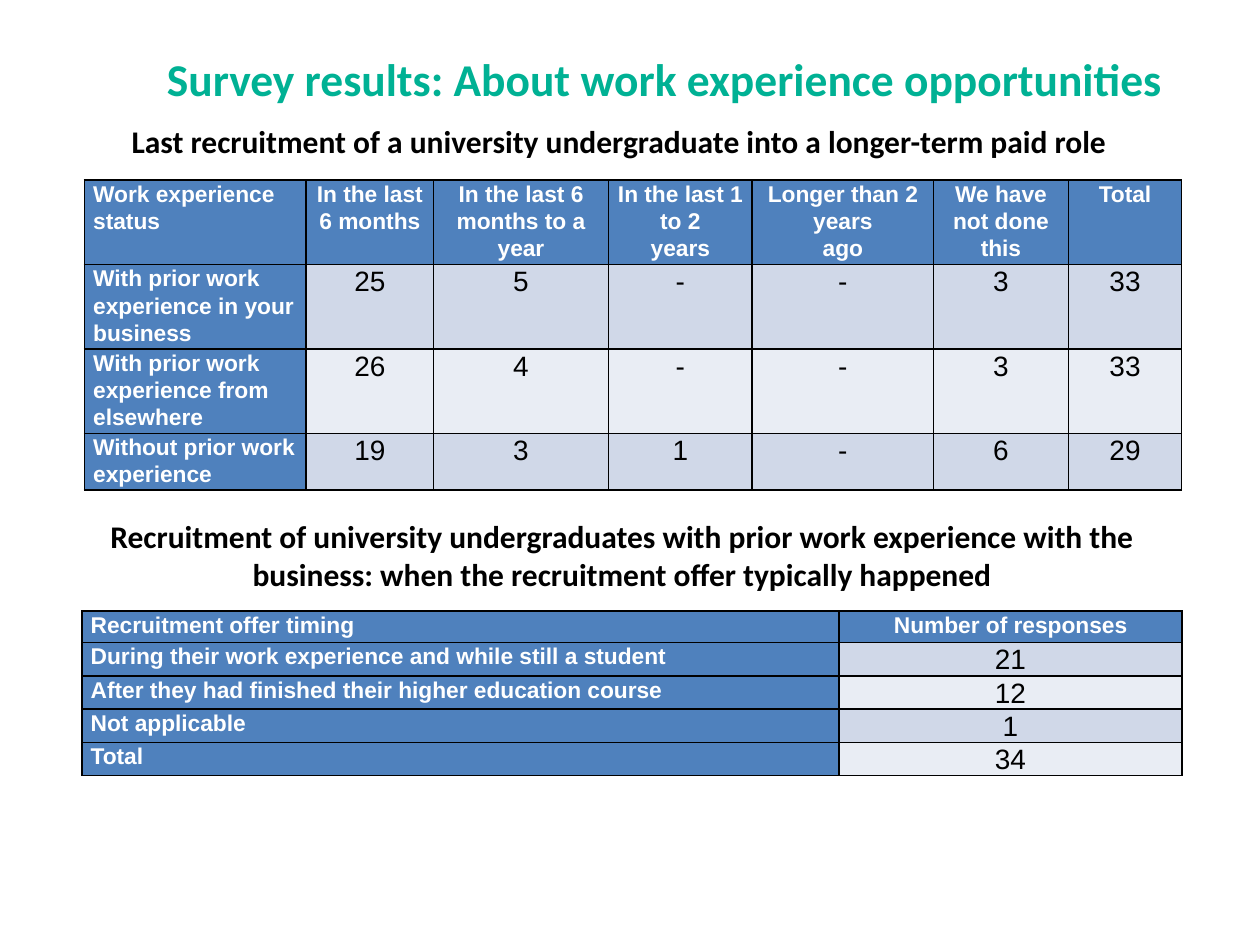
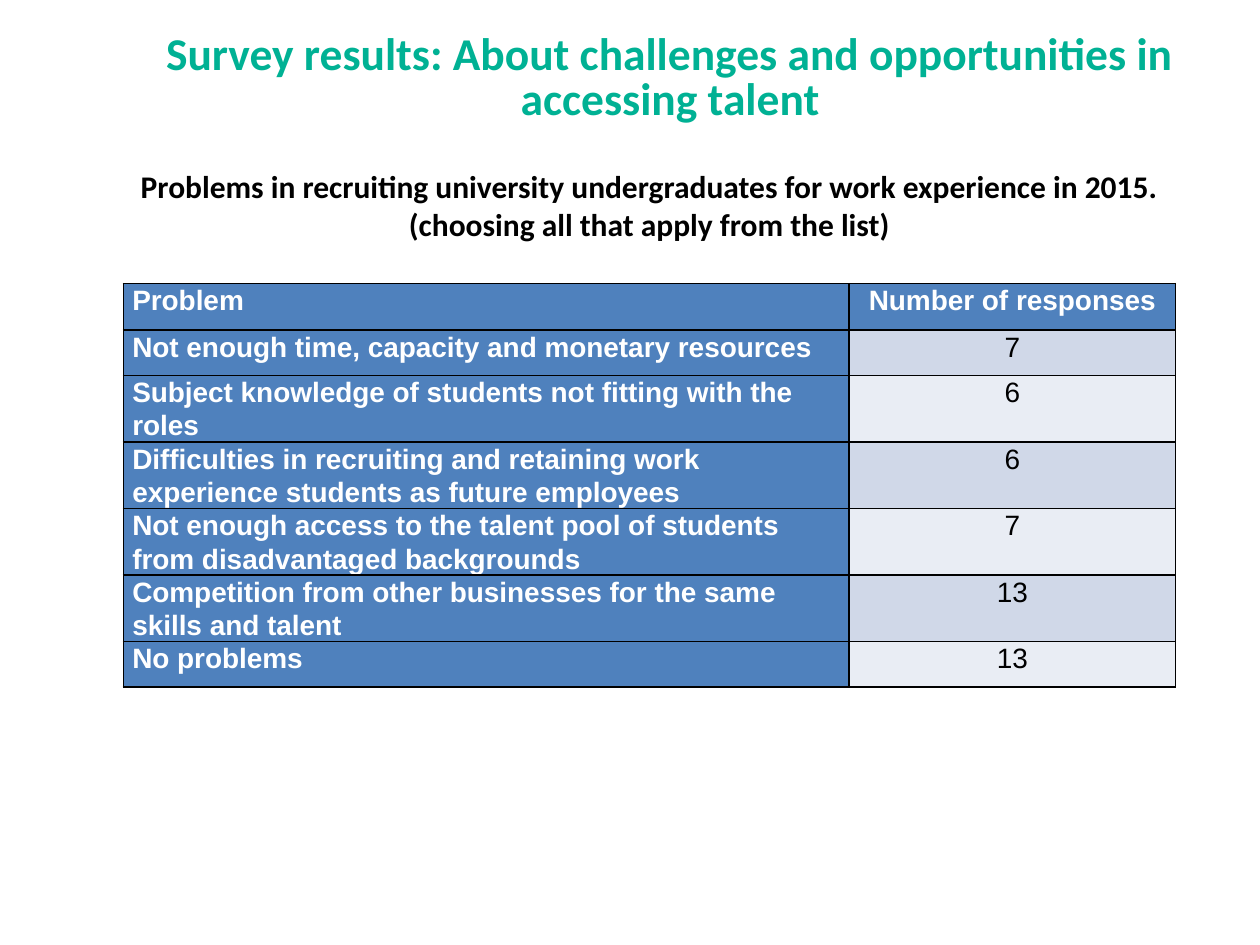
from dataclasses import dataclass

from lxml import etree
from pptx import Presentation
from pptx import util as u
from pptx.dml import color
from pptx.enum import text
from pptx.oxml import ns


@dataclass(frozen=True)
class Theme:
    title_color: str = "00B194"
    header_fill: str = "4F81BD"
    band_fills: tuple[str, str] = ("D0D8E8", "E9EDF4")
    light: str = "FFFFFF"
    dark: str = "000000"
    heading_font: str = "Calibri"
    table_font: str = "Arial"
    title_size: float = 26
    heading_size: float = 18
    value_size: float = 16
    border_width: float = 1
    cell_margin: float = 0.07
    cell_spacing: float = 1.07


THEME = Theme()


@dataclass(frozen=True)
class Box:
    left: float
    top: float
    width: float
    height: float

    def lengths(self) -> tuple:
        return tuple(u.Inches(v) for v in (self.left, self.top, self.width, self.height))


@dataclass(frozen=True)
class Heading:
    words: str
    box: Box


@dataclass(frozen=True)
class ResultTable:
    left: float
    top: float
    columns: tuple[float, ...]
    row_heights: tuple[float, ...]
    label_size: float
    rows: tuple[tuple[str, ...], ...]


@dataclass(frozen=True)
class ResultSlide:
    title: Heading
    title_spacing: float
    headings: tuple[Heading, ...]
    tables: tuple[ResultTable, ...]


def add_run(paragraph, words: str, font_name: str, size: float, rgb: str, bold: bool) -> None:
    run = paragraph.add_run()
    run.text = words
    run.font.name = font_name
    run.font.size = u.Pt(size)
    run.font.bold = bold
    run.font.color.rgb = color.RGBColor.from_string(rgb)


def fill_heading(shape, words: str, size: float, rgb: str):
    """Set centred bold heading text and return its paragraph."""
    frame = shape.text_frame
    frame.word_wrap = True
    frame.auto_size = text.MSO_AUTO_SIZE.NONE
    frame.vertical_anchor = text.MSO_ANCHOR.MIDDLE
    paragraph = frame.paragraphs[0]
    paragraph.alignment = text.PP_ALIGN.CENTER
    add_run(paragraph, words, THEME.heading_font, size, rgb, True)
    return paragraph


def add_title(slide, title: Heading, spacing: float) -> None:
    shape = slide.shapes.title
    shape.left, shape.top, shape.width, shape.height = title.box.lengths()
    paragraph = fill_heading(shape, title.words, THEME.title_size, THEME.title_color)
    paragraph.line_spacing = u.Pt(spacing)


def add_heading(slide, heading: Heading) -> None:
    shape = slide.shapes.add_textbox(*heading.box.lengths())
    fill_heading(shape, heading.words, THEME.heading_size, THEME.dark)


def add_borders(cell) -> None:
    properties = cell._tc.get_or_add_tcPr()
    for side in ("lnL", "lnR", "lnT", "lnB"):
        line = etree.SubElement(properties, ns.qn(f"a:{side}"), w=str(u.Pt(THEME.border_width)))
        fill = etree.SubElement(line, ns.qn("a:solidFill"))
        etree.SubElement(fill, ns.qn("a:srgbClr"), val=THEME.dark)


def fill_cell(cell, words: str, row: int, column: int, label_size: float) -> None:
    is_label = row == 0 or column == 0
    cell.margin_left = cell.margin_right = u.Inches(THEME.cell_margin)
    cell.margin_top = cell.margin_bottom = 0
    add_borders(cell)
    cell.fill.solid()
    fill = THEME.header_fill if is_label else THEME.band_fills[(row - 1) % 2]
    cell.fill.fore_color.rgb = color.RGBColor.from_string(fill)
    frame = cell.text_frame
    for index, line in enumerate(words.split("\n")):
        paragraph = frame.add_paragraph() if index else frame.paragraphs[0]
        paragraph.alignment = text.PP_ALIGN.CENTER if column else text.PP_ALIGN.LEFT
        paragraph.line_spacing = THEME.cell_spacing
        add_run(paragraph, line, THEME.table_font,
                label_size if is_label else THEME.value_size,
                THEME.light if is_label else THEME.dark, is_label)


def add_result_table(slide, result: ResultTable) -> None:
    box = Box(result.left, result.top, sum(result.columns), sum(result.row_heights))
    table = slide.shapes.add_table(len(result.rows), len(result.columns), *box.lengths()).table
    for column, width in zip(table.columns, result.columns):
        column.width = u.Inches(width)
    for row, height in zip(table.rows, result.row_heights):
        row.height = u.Inches(height)
    for row, values in enumerate(result.rows):
        for column, words in enumerate(values):
            fill_cell(table.cell(row, column), words, row, column, result.label_size)


# Work experience opportunities
RECRUITMENT_TABLE = ResultTable(
    0.67, 1.43, (1.76, 1.01, 1.39, 1.14, 1.44, 1.07, 0.9), (0.67, 0.67, 0.67, 0.45), 13,
    (
        ("Work experience status", "In the last 6 months", "In the last 6 months to a year",
         "In the last 1 to 2\nyears", "Longer than 2 years\nago", "We have not done\nthis", "Total"),
        ("With prior work experience in your business", "25", "5", "-", "-", "3", "33"),
        ("With prior work experience from elsewhere", "26", "4", "-", "-", "3", "33"),
        ("Without prior work experience", "19", "3", "1", "-", "6", "29"),
    ),
)
OFFER_TABLE = ResultTable(
    0.65, 4.85, (6.01, 2.72), (0.25,) * 5, 13,
    (
        ("Recruitment offer timing", "Number of responses"),
        ("During their work experience and while still a student", "21"),
        ("After they had finished their higher education course", "12"),
        ("Not applicable", "1"),
        ("Total", "34"),
    ),
)

# Challenges in accessing talent
PROBLEM_TABLE = ResultTable(
    0.98, 2.25, (5.76, 2.59), (0.37,) + (0.36,) * 6, 16,
    (
        ("Problem", "Number of responses"),
        ("Not enough time, capacity and monetary resources", "7"),
        ("Subject knowledge of students not fitting with the roles", "6"),
        ("Difficulties in recruiting and retaining work experience students as future employees", "6"),
        ("Not enough access to the talent pool of students from disadvantaged backgrounds", "7"),
        ("Competition from other businesses for the same skills and talent", "13"),
        ("No problems", "13"),
    ),
)

SLIDES = (
    ResultSlide(
        Heading("Survey results: About work experience opportunities ", Box(1.14, 0.27, 8.36, 0.56)),
        41,
        (
            Heading("Last recruitment of a university undergraduate into a longer-term paid role",
                    Box(0.91, 0.92, 8.01, 0.4)),
            Heading("Recruitment of university undergraduates with prior work experience with the "
                    "business: when the recruitment offer typically happened",
                    Box(0.51, 4.05, 8.86, 0.71)),
        ),
        (RECRUITMENT_TABLE, OFFER_TABLE),
    ),
    ResultSlide(
        Heading("Survey results: About challenges and opportunities in accessing talent",
                Box(1.14, 0.27, 8.36, 0.72)),
        26,
        (
            Heading("Problems in recruiting university undergraduates for work experience in 2015. "
                    "(choosing all that apply from the list)", Box(0.98, 1.27, 8.35, 0.71)),
        ),
        (PROBLEM_TABLE,),
    ),
)


def main() -> None:
    presentation = Presentation()
    presentation.slide_width = u.Inches(10)
    presentation.slide_height = u.Inches(7.5)
    title_only = presentation.slide_layouts[5]
    for content in SLIDES:
        slide = presentation.slides.add_slide(title_only)
        add_title(slide, content.title, content.title_spacing)
        for result in content.tables:
            add_result_table(slide, result)
        for heading in content.headings:
            add_heading(slide, heading)
    presentation.save("out.pptx")


if __name__ == "__main__":
    main()
